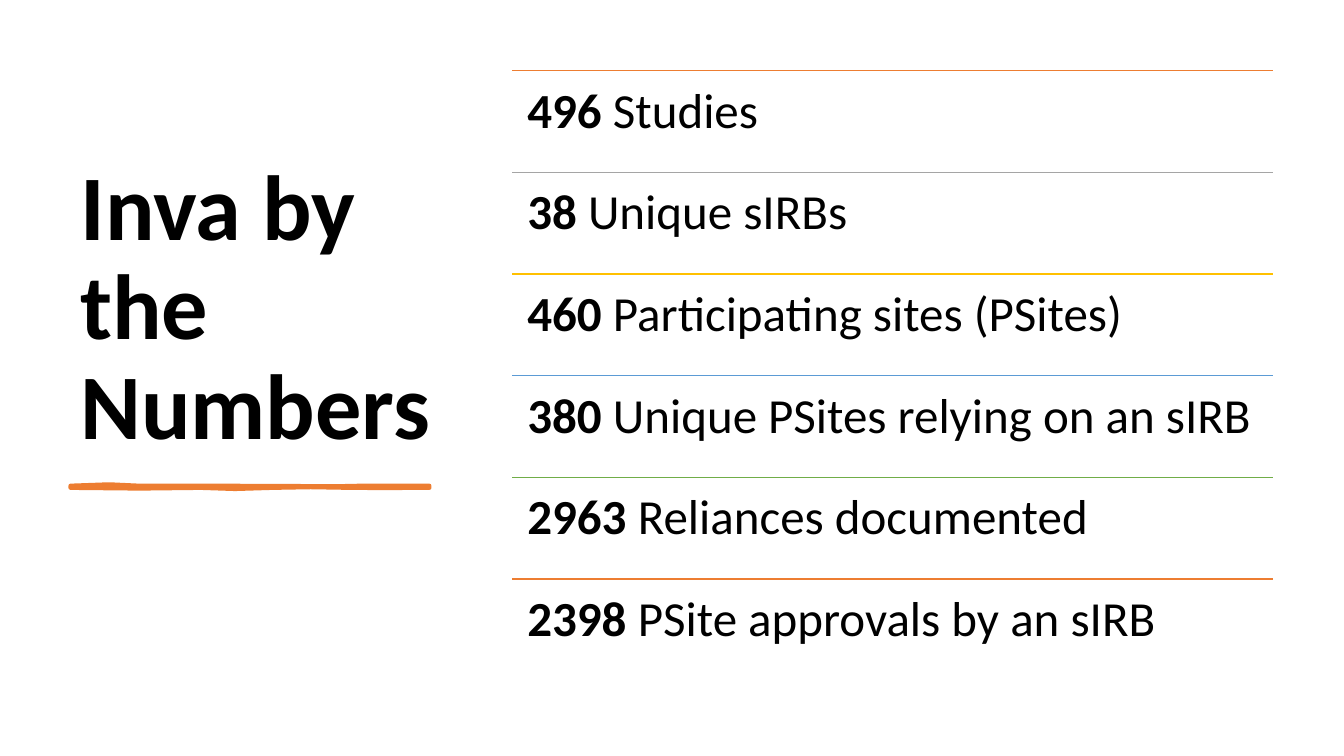
from dataclasses import dataclass

from lxml import etree
from pptx import Presentation
from pptx.dml.color import RGBColor
from pptx.enum.shapes import MSO_CONNECTOR
from pptx.enum.text import MSO_ANCHOR
from pptx.oxml.ns import qn
from pptx.util import Pt

STRAIGHT = MSO_CONNECTOR.STRAIGHT
TOP = MSO_ANCHOR.TOP
BOTTOM = MSO_ANCHOR.BOTTOM

BLACK = RGBColor(0x00, 0x00, 0x00)
ORANGE = RGBColor(0xED, 0x7D, 0x31)
GRAY = RGBColor(0xA5, 0xA5, 0xA5)
GOLD = RGBColor(0xFF, 0xC0, 0x00)
BLUE = RGBColor(0x5B, 0x9B, 0xD5)
GREEN = RGBColor(0x70, 0xAD, 0x47)

FONT = "Calibri"
LEFT = 365.8
WIDTH = 543.6
FIRST = 50.5
PITCH = 72.61


@dataclass(frozen=True)
class Stat:
    count: str
    label: str
    color: RGBColor


@dataclass(frozen=True)
class Box:
    left: float
    top: float
    width: float
    height: float


@dataclass(frozen=True)
class Style:
    size: float
    side: float
    edge: float
    anchor: MSO_ANCHOR


STATS = [
    Stat("496", " Studies", ORANGE),
    Stat("38", " Unique sIRBs", GRAY),
    Stat("460", " Participating sites (PSites)", GOLD),
    Stat("380", " Unique PSites relying on an sIRB", BLUE),
    Stat("2963", " Reliances documented", GREEN),
    Stat("2398", " PSite approvals by an sIRB", ORANGE),
]

TITLE = Style(66, 7.2, 3.6, BOTTOM)
ROW = Style(35, 10.8, 10.8, TOP)

BRUSH = [
    (50.4, 347), (78, 346), (99.4, 347), (150.5, 347), (204.5, 347.2),
    (240, 347.4), (258.5, 347), (282, 347), (306.7, 347),
    (306.7, 348.5), (272, 348.6), (250.6, 348.5), (222, 348), (194.4, 348.5),
    (168, 349.3), (143.3, 348.5), (100, 349), (50.4, 348.5),
]


def add_text(shapes, box: Box, style: Style, runs: list[tuple[str, bool]]) -> None:
    shape = shapes.add_textbox(Pt(box.left), Pt(box.top), Pt(box.width), Pt(box.height))
    frame = shape.text_frame
    frame.word_wrap = True
    frame.vertical_anchor = style.anchor
    frame.margin_left = frame.margin_right = Pt(style.side)
    frame.margin_top = frame.margin_bottom = Pt(style.edge)
    para = frame.paragraphs[0]
    para.line_spacing = 0.9
    for text, bold in runs:
        run = para.add_run()
        run.text = text
        run.font.name = FONT
        run.font.size = Pt(style.size)
        run.font.bold = bold
        run.font.color.rgb = BLACK


def add_rule(shapes, top: float, color: RGBColor) -> None:
    rule = shapes.add_connector(STRAIGHT, Pt(LEFT), Pt(top), Pt(LEFT + WIDTH), Pt(top))
    rule.line.color.rgb = color
    rule.line.width = Pt(1)
    etree.SubElement(rule._element.spPr, qn("a:effectLst"))


def add_brush(shapes, points: list[tuple[float, float]]) -> None:
    start, *rest = [(Pt(x), Pt(y)) for x, y in points]
    pen = shapes.build_freeform(*start)
    pen.add_line_segments(rest, close=True)
    brush = pen.convert_to_shape()
    brush.shadow.inherit = False
    brush.fill.solid()
    brush.fill.fore_color.rgb = ORANGE
    brush.line.color.rgb = ORANGE
    brush.line.width = Pt(3)


def main() -> None:
    deck = Presentation()
    deck.slide_width = Pt(960)
    deck.slide_height = Pt(540)
    shapes = deck.slides.add_slide(deck.slide_layouts[6]).shapes
    add_text(shapes, Box(50.4, 50.4, 281.5, 281.5), TITLE, [("Inva by the Numbers", True)])
    add_brush(shapes, BRUSH)
    for i, stat in enumerate(STATS):
        top = FIRST + i * PITCH
        add_rule(shapes, top, stat.color)
        runs = [(stat.count, True), (stat.label, False)]
        add_text(shapes, Box(LEFT, top, WIDTH, PITCH), ROW, runs)
    deck.save("out.pptx")


if __name__ == "__main__":
    main()
